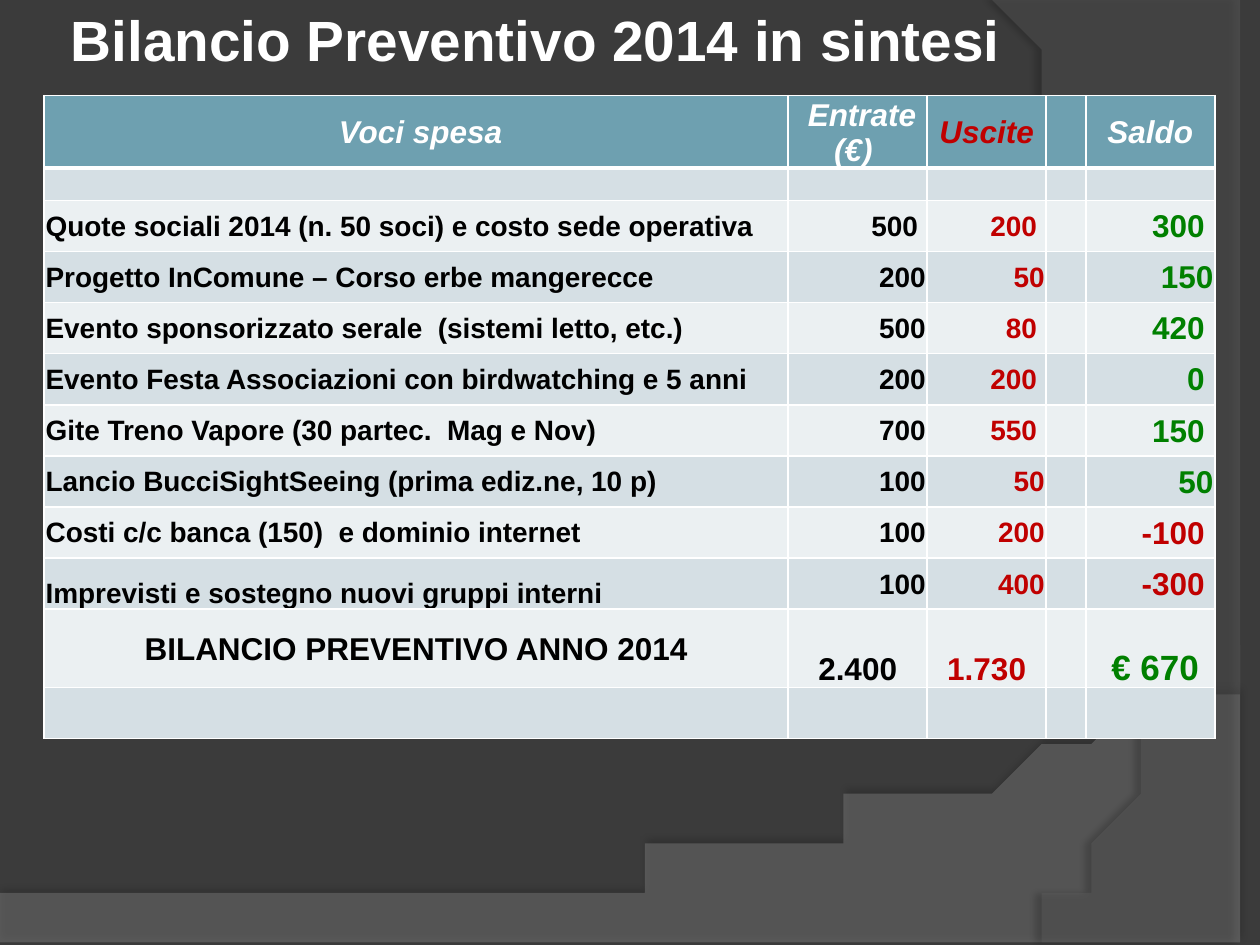
import pptx
import pptx.util
import pptx.oxml
import pptx.oxml.ns
import pptx.dml.color
import pptx.enum.text

Cm, Pt = pptx.util.Cm, pptx.util.Pt
ALIGN = pptx.enum.text.PP_ALIGN
ANCHOR = pptx.enum.text.MSO_ANCHOR

TITLE = "Bilancio Preventivo 2014 in sintesi"
HEADER = (" Voci spesa", " Entrate (€) ", " Uscite ", "", "Saldo")
BLANK = ("",) * 5
ITEMS = [
    ("Quote sociali 2014 (n. 50 soci) e costo sede operativa", "500 ", "200 ", "", "300 "),
    ("Progetto InComune – Corso erbe mangerecce", "200", "50", "", "150"),
    ("Evento sponsorizzato serale  (sistemi letto, etc.)", "500", "80 ", "", "420 "),
    ("Evento Festa Associazioni con birdwatching e 5 anni", "200", "200 ", "", "0 "),
    ("Gite Treno Vapore (30 partec.  Mag e Nov)", "700", "550 ", "", "150 "),
    ("Lancio BucciSightSeeing (prima ediz.ne, 10 p)", "100", "50", "", "50"),
    ("Costi c/c banca (150)  e dominio internet", "100", "200", "", "-100 "),
    ("Imprevisti e sostegno nuovi gruppi interni", "100", "400", "", "-300 "),
]
TOTAL = ("BILANCIO PREVENTIVO ANNO 2014", "2.400", "1.730", "", " € 670")
ROWS = [HEADER, BLANK, *ITEMS, TOTAL, BLANK]
TOTAL_ROW = len(ROWS) - 2

COL_WIDTHS = (15, 2.8, 2.4, 0.8, 2.6)
ROW_HEIGHTS = [1.46, 0.65] + [1.03] * len(ITEMS) + [1.58, 1.03]
NAME, EXPENSE, BALANCE = 0, 2, 4

COLORS = {
    "background": "3B3B3B", "wave": "7F7F7F", "arc": "5E5E5E", "shadow": "000000",
    "white": "FFFFFF", "black": "000000", "red": "C00000", "green": "008000",
    "header": "6EA0B0", "dark_band": "D5DFE4", "light_band": "EBF0F2",
}


def rgb(name):
    return pptx.dml.color.RGBColor.from_string(COLORS[name])


def xml(text):
    return pptx.oxml.parse_xml(text.replace(" ", f' {pptx.oxml.ns.nsdecls("a")} ', 1))


def bezier(p0, p1, p2, p3, steps=40):
    """Points of a cubic curve, without its start."""
    for i in range(1, steps + 1):
        t = i / steps
        u = 1 - t
        yield tuple(u**3 * a + 3 * u * u * t * b + 3 * u * t * t * c + t**3 * d
                    for a, b, c, d in zip(p0, p1, p2, p3))


def add_backdrop(slide, corners, curve, color, opacity, shadow):
    """Translucent outline in cm: straight corners, then a curve from the last one."""
    points = corners + list(bezier(corners[-1], *curve))
    builder = slide.shapes.build_freeform(*points[0], scale=Cm(1))
    builder.add_line_segments(points[1:], close=True)
    sp = builder.convert_to_shape()
    sp.line.fill.background()
    sp.fill.solid()
    sp.fill.fore_color.rgb = rgb(color)
    sp.element.find(".//" + pptx.oxml.ns.qn("a:srgbClr")).append(
        xml(f'<a:alpha val="{opacity * 1000}"/>'))
    sp.shadow.inherit = False
    alpha, blur, dist, angle = shadow
    sp.element.find(".//" + pptx.oxml.ns.qn("a:effectLst")).append(xml(
        f'<a:outerShdw blurRad="{Pt(blur)}" dist="{Pt(dist)}" dir="{angle * 60000}" '
        f'rotWithShape="0"><a:srgbClr val="{COLORS["shadow"]}">'
        f'<a:alpha val="{alpha * 1000}"/></a:srgbClr></a:outerShdw>'))


def set_borders(cell, row):
    thick = {0: "B", 1: "T"}.get(row)
    tc_pr = cell._tc.get_or_add_tcPr()
    for side in "LRTB":
        tc_pr.append(xml(
            f'<a:ln{side} w="{Pt(3 if side == thick else 1)}"><a:solidFill>'
            f'<a:srgbClr val="{COLORS["white"]}"/></a:solidFill></a:ln{side}>'))


def text_color(row, col, text):
    if col == EXPENSE or text.startswith("-"):
        return "red"
    if row == 0:
        return "white"
    return "green" if col == BALANCE else "black"


def text_size(row, col):
    if row == TOTAL_ROW:
        return 20 if col == BALANCE else 18
    return 18 if row == 0 or col == BALANCE else 16


def fill_cell(cell, row, col, text):
    set_borders(cell, row)
    cell.fill.solid()
    cell.fill.fore_color.rgb = rgb(
        "header" if row == 0 else "dark_band" if row % 2 else "light_band")
    cell.margin_left = cell.margin_right = cell.margin_top = Cm(0.03)
    cell.margin_bottom = 0
    p = cell.text_frame.paragraphs[0]
    if not text:
        p._p.append(xml('<a:endParaRPr sz="800"/>'))
        return
    at_bottom = (row == TOTAL_ROW and col != NAME) or (row == TOTAL_ROW - 1 and col == NAME)
    cell.vertical_anchor = ANCHOR.BOTTOM if at_bottom else ANCHOR.MIDDLE
    p.text = text
    if row in (0, TOTAL_ROW):
        p.alignment = ALIGN.CENTER
    else:
        p.alignment = ALIGN.LEFT if col == NAME else ALIGN.RIGHT
    font = p.runs[0].font
    font.name, font.size = "Arial", Pt(text_size(row, col))
    font.bold, font.italic = True, row == 0
    font.color.rgb = rgb(text_color(row, col, text))


def add_title(slide):
    title = slide.shapes.title
    title.element.getparent().append(title.element)
    title.left, title.top, title.width, title.height = Cm(1.3), 0, Cm(20.75), Cm(1.55)
    tf = title.text_frame
    tf.text = TITLE
    tf.word_wrap = True
    tf.vertical_anchor = ANCHOR.MIDDLE
    tf.margin_left = tf.margin_right = tf.margin_top = tf.margin_bottom = Cm(0.13)
    p = tf.paragraphs[0]
    p.alignment = ALIGN.LEFT
    font = p.runs[0].font
    font.name, font.size, font.bold = "Arial", Pt(32.4), True
    font.color.rgb = rgb("white")


def add_budget(slide):
    table = slide.shapes.add_table(
        len(ROWS), len(COL_WIDTHS), Cm(0.89), Cm(1.93),
        Cm(sum(COL_WIDTHS)), Cm(sum(ROW_HEIGHTS))).table
    for column, width in zip(table.columns, COL_WIDTHS):
        column.width = Cm(width)
    for i, (height, texts) in enumerate(zip(ROW_HEIGHTS, ROWS)):
        table.rows[i].height = Cm(height)
        for j, text in enumerate(texts):
            fill_cell(table.cell(i, j), i, j, text)


def main():
    prs = pptx.Presentation()
    prs.slide_width, prs.slide_height = Cm(25.4), Cm(19.05)
    slide = prs.slides.add_slide(prs.slide_layouts[5])
    slide.background.fill.solid()
    slide.background.fill.fore_color.rgb = rgb("background")
    add_backdrop(slide, [(0, 17.91), (0, 19.05), (25.4, 19.05), (25.4, 13.21)],
                 [(14.2, 18.52), (9.93, 18.26), (0, 17.91)],
                 "wave", 45, (35, 4, 3.5, 270))
    add_backdrop(slide, [(25.4, 0.05), (25.4, 19.05), (20.85, 19.05)],
                 [(23.75, 15.72), (25.86, 7.62), (20.32, 0)],
                 "arc", 40, (45, 4, 4, 180))
    add_title(slide)
    add_budget(slide)
    prs.save("out.pptx")


if __name__ == "__main__":
    main()
